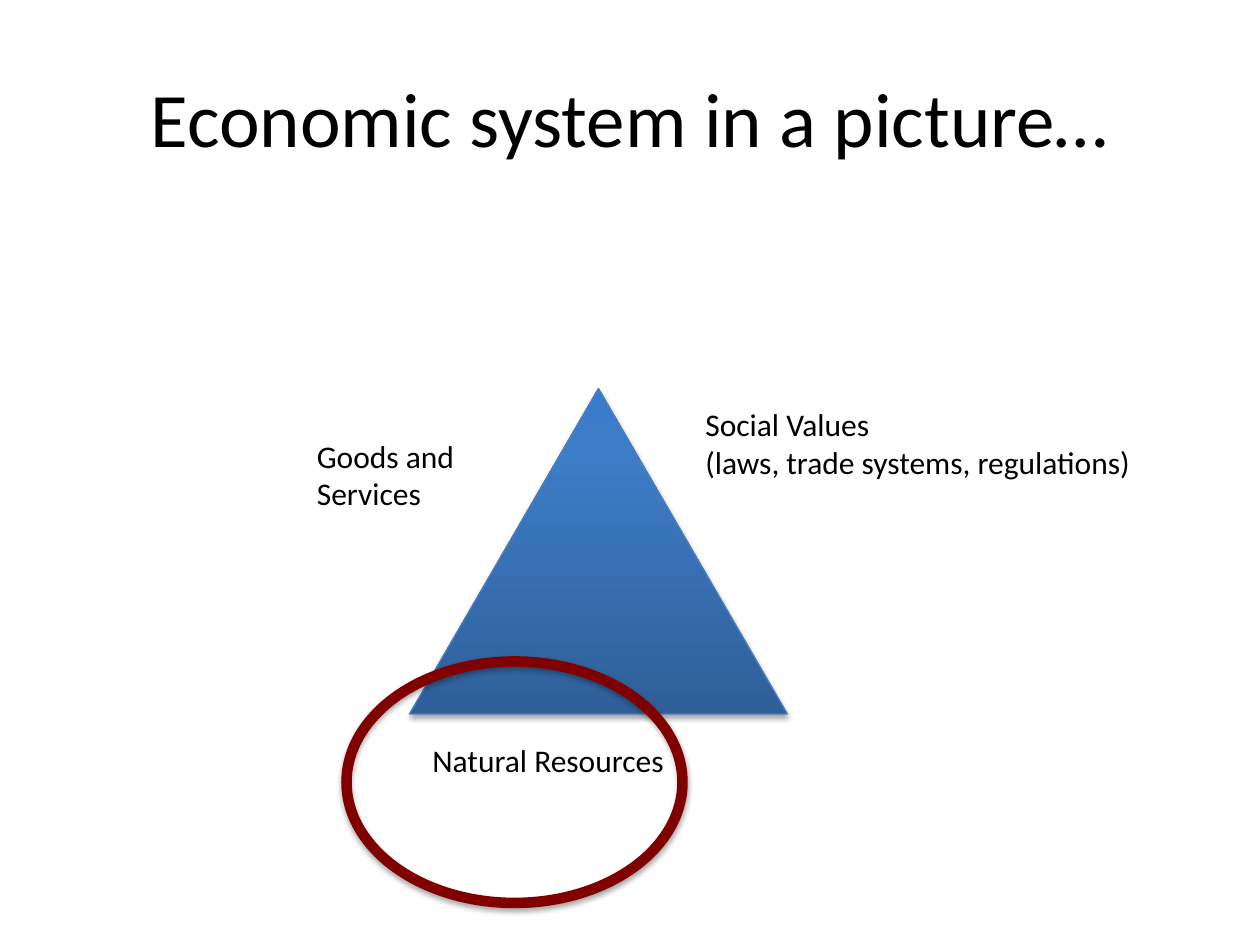
from dataclasses import dataclass

import pptx
import pptx.dml.color
import pptx.enum.shapes
import pptx.enum.text
import pptx.oxml
import pptx.oxml.ns
import pptx.util
from lxml import etree

SHAPES = pptx.enum.shapes.MSO_SHAPE
COLUMNS, ROWS = 120, 90


@dataclass(frozen=True)
class Theme:
    font: str = "Calibri"
    title_size: int = 44
    label_size: int = 18
    text: str = "000000"
    triangle_edge: str = "4B7EBC"
    triangle_stops: tuple = ((0, "2F5F99"), (80, "3D7CC7"), (100, "3A7CCB"))
    highlight: str = "800000"
    shadow: str = "000000"


def rgb(value):
    return pptx.dml.color.RGBColor.from_string(value)


def add_xml(parent, tag, **attributes):
    return etree.SubElement(parent, pptx.oxml.ns.qn(tag), attributes)


def add_colour(parent, value):
    return add_xml(parent, "a:srgbClr", val=value)


class Diagram:
    """Draws on one slide; places are (column, row, columns, rows) of the grid."""

    def __init__(self, deck, theme):
        self.deck = deck
        self.theme = theme
        self.slide = deck.slides.add_slide(deck.slide_layouts[5])

    def place(self, column, row, columns, rows):
        across = self.deck.slide_width / COLUMNS
        down = self.deck.slide_height / ROWS
        return [round(n) for n in (column * across, row * down, columns * across, rows * down)]

    def style_text(self, frame, size):
        frame.word_wrap = True
        for paragraph in frame.paragraphs:
            for run in paragraph.runs:
                run.font.name = self.theme.font
                run.font.size = pptx.util.Pt(size)
                run.font.color.rgb = rgb(self.theme.text)

    def title(self, words, place):
        heading = self.slide.shapes.title
        heading.left, heading.top, heading.width, heading.height = self.place(*place)
        frame = heading.text_frame
        frame.text = words
        frame.vertical_anchor = pptx.enum.text.MSO_ANCHOR.MIDDLE
        frame.paragraphs[0].alignment = pptx.enum.text.PP_ALIGN.CENTER
        self.style_text(frame, self.theme.title_size)

    def label(self, words, place):
        frame = self.slide.shapes.add_textbox(*self.place(*place)).text_frame
        frame.text = words
        self.style_text(frame, self.theme.label_size)

    def outlined(self, kind, place, colour, weight):
        """Add an unfilled shape with a soft shadow straight below it."""
        shape = self.slide.shapes.add_shape(kind, *self.place(*place))
        shape.fill.background()
        shape.line.color.rgb = rgb(colour)
        shape.line.width = pptx.util.Pt(weight)
        shape.shadow.inherit = False
        effects = shape._element.spPr.find(pptx.oxml.ns.qn("a:effectLst"))
        shadow = add_xml(effects, "a:outerShdw", blurRad="40000", dist="23000",
                         dir="5400000", rotWithShape="0")
        add_xml(add_colour(shadow, self.theme.shadow), "a:alpha", val="35000")
        return shape

    def triangle(self, place):
        shape = self.outlined(SHAPES.ISOSCELES_TRIANGLE, place, self.theme.triangle_edge, 0.75)
        shape.fill.gradient()
        shape.fill.gradient_angle = 90
        stops = shape._element.spPr.find(".//" + pptx.oxml.ns.qn("a:gsLst"))
        for stop in list(stops):
            stops.remove(stop)
        for percent, colour in self.theme.triangle_stops:
            add_colour(add_xml(stops, "a:gs", pos=str(percent * 1000)), colour)

    def highlight_ring(self, place):
        self.outlined(SHAPES.OVAL, place, self.theme.highlight, 6)


def main():
    deck = pptx.Presentation()
    deck.slide_width = pptx.util.Inches(10)
    deck.slide_height = pptx.util.Inches(7.5)
    diagram = Diagram(deck, Theme())
    diagram.title("Economic system in a picture…", (6, 3.6, 108, 15))
    diagram.triangle((39, 37, 36, 31))
    diagram.label("Natural Resources", (40, 70, 36, 6))
    diagram.label("Social Values\n(laws, trade systems, regulations)", (66, 38, 43, 16))
    diagram.label("Goods and\nServices", (29, 41, 22, 11))
    diagram.highlight_ring((33, 63, 32, 23))
    deck.save("out.pptx")


if __name__ == "__main__":
    main()
